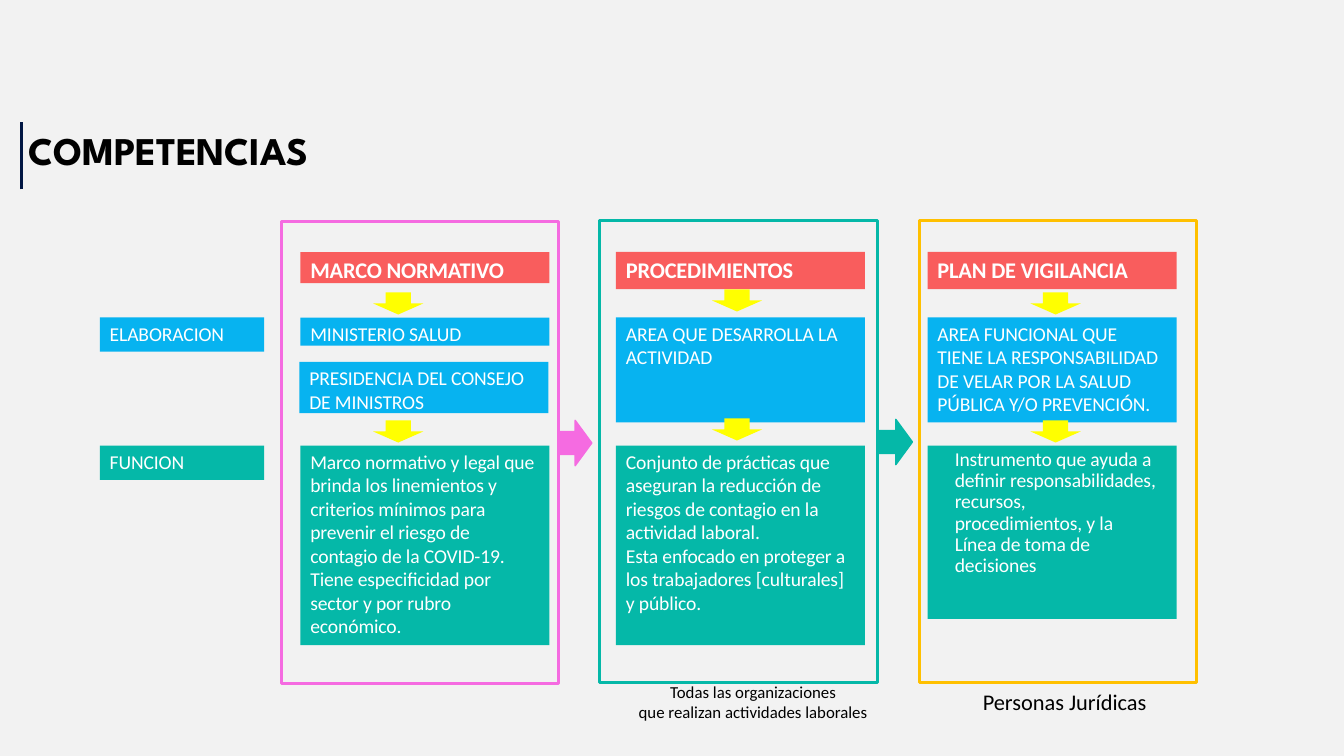
from lxml import etree
from pptx import Presentation
from pptx.dml.color import RGBColor
from pptx.enum.shapes import MSO_CONNECTOR, MSO_SHAPE as Shape
from pptx.enum.text import MSO_ANCHOR as Anchor, PP_ALIGN as Align
from pptx.oxml.ns import qn
from pptx.util import Inches, Pt

COLORS = {
    "background": "F2F2F2", "red": "FF0000", "blue": "07B3F0", "teal": "05B8A8",
    "yellow": "FFFF00", "pink": "F56BE1", "amber": "FFC000", "navy": "011643",
    "white": "FFFFFF", "black": "000000",
}
HEADING = {"size": Pt(16), "bold": True}
BODY = {"size": Pt(14), "bold": False}
CARD_WIDTH, FRAME_WIDTH, FRAME_HEIGHT = 2.47, 2.75, 4.58
LABEL_LEFT, LABEL_WIDTH, LABEL_HEIGHT = 0.99, 1.63, 0.34
HEADING_TOP, AUTHOR_TOP, FUNCTION_TOP = 2.5, 3.15, 4.42
DOWN_WIDTH, DOWN_HEIGHT = 0.5, 0.22
NEXT_WIDTH, NEXT_HEIGHT = 0.33, 0.45

title = "COMPETENCIAS"
row_labels = [("ELABORACION", AUTHOR_TOP, "blue"), ("FUNCION", FUNCTION_TOP, "teal")]
stages = [
    {
        "heading": "MARCO NORMATIVO", "heading_height": 0.31, "left": 2.98,
        "authors": [
            (2.98, AUTHOR_TOP, 0.28, "MINISTERIO SALUD"),
            (2.97, 3.59, 0.51, "PRESIDENCIA DEL CONSEJO\nDE MINISTROS"),
        ],
        "function": [
            "Marco normativo y legal que\nbrinda los linemientos y\ncriterios mínimos para\n"
            "prevenir el riesgo de\ncontagio de la COVID-19.",
            "Tiene especificidad por\nsector y por rubro\neconómico.",
        ],
        "function_height": 1.98, "indent": 0.1, "spacing": 1.0,
        "down_left": 3.7, "down_tops": (2.9, 4.17),
        "frame": (2.79, 2.2, "pink"), "next": (5.54, 4.17),
    },
    {
        "heading": "PROCEDIMIENTOS", "heading_height": 0.37, "left": 6.11,
        "authors": [(6.11, AUTHOR_TOP, 1.04, "AREA QUE DESARROLLA LA\nACTIVIDAD")],
        "function": [
            "Conjunto de prácticas que\naseguran la reducción de\n"
            "riesgos de contagio en la\nactividad laboral.",
            "Esta enfocado en proteger a\nlos trabajadores [culturales]\ny público.",
        ],
        "function_height": 1.98, "indent": 0.1, "spacing": 1.0,
        "down_left": 7.06, "down_tops": (2.87, 4.15),
        "frame": (5.95, 2.19, "teal"), "next": (8.72, 4.16),
    },
    {
        "heading": "PLAN DE VIGILANCIA", "heading_height": 0.37, "left": 9.2,
        "authors": [(9.2, AUTHOR_TOP, 1.04,
                     "AREA FUNCIONAL QUE\nTIENE LA RESPONSABILIDAD\n"
                     "DE VELAR POR LA SALUD\nPÚBLICA Y/O PREVENCIÓN.")],
        "function": [
            "Instrumento que ayuda a\ndefinir responsabilidades,\nrecursos,\n"
            "procedimientos, y la\nLínea de toma de\ndecisiones",
        ],
        "function_height": 1.72, "indent": 0.27, "spacing": 0.9,
        "down_left": 10.22, "down_tops": (2.9, 4.17),
        "frame": (9.12, 2.19, "amber"), "next": None,
    },
]
captions = [
    (9.64, 6.78, 1.84, 0.37, 16, ["Personas Jurídicas"]),
    (6.22, 6.71, 2.5, 0.5, 12,
     ["Todas las organizaciones", "que realizan actividades laborales"]),
]

deck = Presentation()
deck.slide_width, deck.slide_height = Inches(13.33), Inches(7.5)
slide = deck.slides.add_slide(deck.slide_layouts[6])


def color(name):
    return RGBColor.from_string(COLORS[name])


def add_block(kind, box, fill=None, line=None, line_width=1):
    block = slide.shapes.add_shape(kind, *map(Inches, box))
    block.shadow.inherit = False
    if fill:
        block.fill.solid()
        block.fill.fore_color.rgb = color(fill)
    else:
        block.fill.background()
    if line:
        block.line.color.rgb = color(line)
        block.line.width = Pt(line_width)
    else:
        block.line.fill.background()
    return block


def write(block, paragraphs, text_color, font, frame, align=Align.LEFT, spacing=1.0, tracking=-10):
    text_frame = block.text_frame
    for name, value in frame.items():
        setattr(text_frame, name, value)
    for index, wording in enumerate(paragraphs):
        paragraph = text_frame.paragraphs[0] if index == 0 else text_frame.add_paragraph()
        paragraph.text = wording
        paragraph.alignment = align
        paragraph.line_spacing = spacing
        for run in paragraph.runs:
            for name, value in ({"name": "Calibri"} | font).items():
                setattr(run.font, name, value)
            run.font.color.rgb = color(text_color)
            if tracking:
                run.font._element.set("spc", str(tracking))


def add_card(box, paragraphs, fill, font=BODY, indent=0.1, spacing=1.0):
    card = add_block(Shape.RECTANGLE, box, fill)
    frame = {"margin_left": Inches(indent), "margin_top": Inches(0.04), "margin_right": 0,
             "margin_bottom": 0, "vertical_anchor": Anchor.TOP, "word_wrap": True}
    write(card, paragraphs, "white", font, frame, spacing=spacing)
    return card


slide.background.fill.solid()
slide.background.fill.fore_color.rgb = color("background")

for label, top, fill in row_labels:
    add_card((LABEL_LEFT, top, LABEL_WIDTH, LABEL_HEIGHT), [label], fill)

for stage in stages:
    left = stage["left"]
    heading = add_card((left, HEADING_TOP, CARD_WIDTH, stage["heading_height"]),
                       [stage["heading"]], "red", HEADING)
    red = heading._element.spPr.find(qn("a:solidFill")).find(qn("a:srgbClr"))
    etree.SubElement(red, qn("a:alpha")).set("val", "61000")
    for author_left, top, height, author in stage["authors"]:
        add_card((author_left, top, CARD_WIDTH, height), [author], "blue")
    add_card((left, FUNCTION_TOP, CARD_WIDTH, stage["function_height"]), stage["function"],
             "teal", indent=stage["indent"], spacing=stage["spacing"])
    for top in stage["down_tops"]:
        add_block(Shape.DOWN_ARROW, (stage["down_left"], top, DOWN_WIDTH, DOWN_HEIGHT), "yellow")
    frame_left, frame_top, accent = stage["frame"]
    add_block(Shape.RECTANGLE, (frame_left, frame_top, FRAME_WIDTH, FRAME_HEIGHT),
              line=accent, line_width=2.25)
    if stage["next"]:
        add_block(Shape.RIGHT_ARROW, (*stage["next"], NEXT_WIDTH, NEXT_HEIGHT), accent, accent)

for left, top, width, height, size, lines in captions:
    caption = slide.shapes.add_textbox(*map(Inches, (left, top, width, height)))
    write(caption, lines, "black", {"size": Pt(size)}, {"word_wrap": False},
          Align.CENTER, tracking=0)

title_box = slide.shapes.add_textbox(*map(Inches, (0.27, 1.23, 13.06, 0.5)))
title_frame = {"margin_left": Inches(0.01), "margin_top": Inches(0.02), "margin_right": 0,
               "margin_bottom": 0, "vertical_anchor": Anchor.MIDDLE, "word_wrap": True}
write(title_box, [title], "black", {"name": "League Spartan", "size": Pt(28), "bold": True},
      title_frame)

title_rule = slide.shapes.add_connector(
    MSO_CONNECTOR.STRAIGHT, *map(Inches, (0.21, 1.88, 0.21, 1.21)))
title_rule.line.color.rgb = color("navy")
title_rule.line.width = Pt(2.25)
etree.SubElement(title_rule._element.spPr, qn("a:effectLst"))

deck.save("out.pptx")
